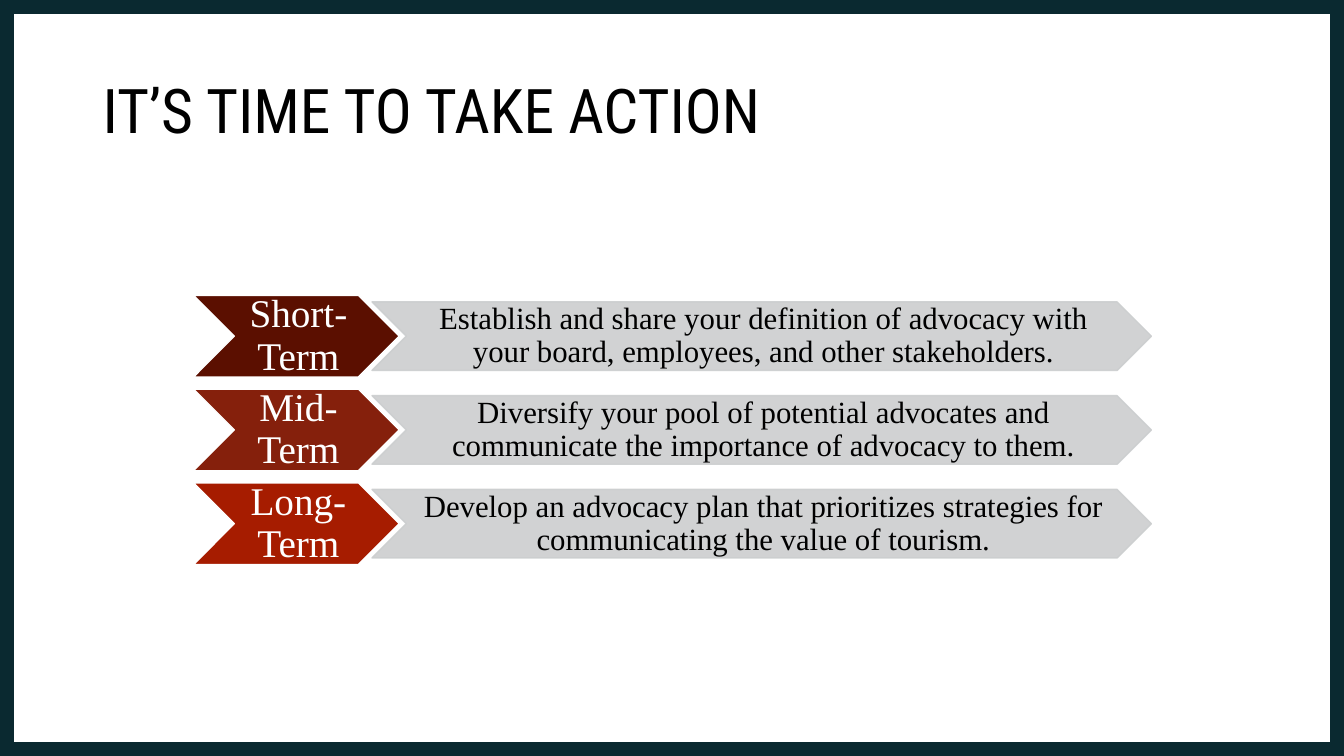
from lxml.etree import SubElement
from pptx import Presentation
from pptx.dml.color import RGBColor
from pptx.enum.shapes import MSO_SHAPE
from pptx.enum.text import MSO_ANCHOR, PP_ALIGN
from pptx.oxml.ns import qn
from pptx.util import Inches, Pt

SERIF = "Times New Roman"
ROW_TOP, ROW_STEP = 2.93, 0.93
LABEL_LEFT, LABEL_WIDTH, LABEL_HEIGHT = 1.92, 2.04, 0.81
ACTION_LEFT, ACTION_WIDTH, ACTION_HEIGHT = 3.69, 7.73, 0.68


def paint(color, value, opacity=100):
    color.rgb = RGBColor.from_string(value)
    if opacity < 100:
        for tint in color._xFill.iter(qn("a:srgbClr")):
            SubElement(tint, qn("a:alpha"), val=str(opacity * 1000))


def add_text(area, text, font_name, size, color, align, margins):
    box = page.shapes.add_textbox(*[Inches(length) for length in area])
    frame = box.text_frame
    frame.word_wrap = True
    frame.vertical_anchor = MSO_ANCHOR.MIDDLE
    (frame.margin_left, frame.margin_top,
     frame.margin_right, frame.margin_bottom) = [Inches(margin) for margin in margins]
    para = frame.paragraphs[0]
    para.text = text
    para.alignment = align
    para.line_spacing = 0.9
    span = para.runs[0]
    span.font.name = font_name
    span.font.size = Pt(size)
    paint(span.font.color, color)


deck = Presentation()
deck.slide_width, deck.slide_height = Inches(13.33), Inches(7.5)
page = deck.slides.add_slide(deck.slide_layouts[6])

# Frame around the slide
border = page.shapes.add_shape(MSO_SHAPE.RECTANGLE, 0, 0, deck.slide_width, deck.slide_height)
border.shadow.inherit = False
border.fill.background()
border.line.width = Pt(20.25)
paint(border.line.color, "0A2930")

# Title
add_text((0.92, 0.4, 11.5, 1.45), "IT’S TIME TO TAKE ACTION", "Roboto Condensed", 44,
         "000000", PP_ALIGN.LEFT, (0.1, 0.05, 0.1, 0.05))

# One row per time frame: a label chevron and an action chevron
rows = [
    ("Short-Term", "5B0F00", "Establish and share your definition of advocacy with "
     "your board, employees, and other stakeholders."),
    ("Mid-Term", "85200C", "Diversify your pool of potential advocates and "
     "communicate the importance of advocacy to them."),
    ("Long-Term", "A61C00", "Develop an advocacy plan that prioritizes strategies for "
     "communicating the value of tourism."),
]
for index, (label, label_fill, action) in enumerate(rows):
    top = ROW_TOP + index * ROW_STEP
    action_top = top + (LABEL_HEIGHT - ACTION_HEIGHT) / 2
    chevrons = [
        (LABEL_LEFT, top, LABEL_WIDTH, LABEL_HEIGHT,
         label, label_fill, "FFFFFF", 100, 28, "FFFFFF", 0.04),
        (ACTION_LEFT, action_top, ACTION_WIDTH, ACTION_HEIGHT,
         action, "CCCECF", "CCCECF", 90, 22, "000000", 0.03),
    ]
    for (left, upper, width, height, text, fill, outline,
         opacity, size, text_color, margin) in chevrons:
        chevron = page.shapes.add_shape(MSO_SHAPE.CHEVRON, Inches(left), Inches(upper),
                                        Inches(width), Inches(height))
        chevron.shadow.inherit = False
        chevron.fill.solid()
        paint(chevron.fill.fore_color, fill, opacity)
        chevron.line.width = Pt(1)
        paint(chevron.line.color, outline, opacity)
        # The text sits between the notch and the point
        add_text((left + height / 2, upper, width - height, height), text, SERIF, size,
                 text_color, PP_ALIGN.CENTER, (margin, 0.02, 0, 0.02))

deck.save("out.pptx")
